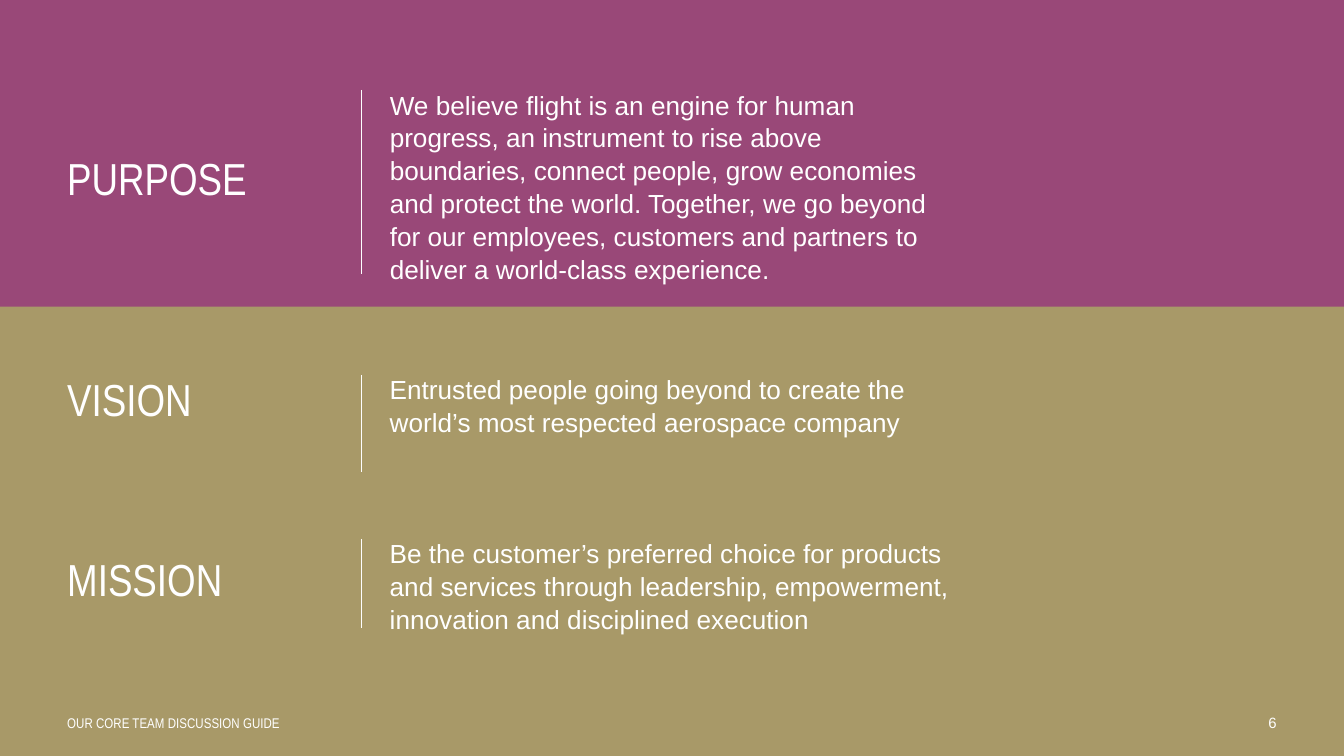
from lxml.etree import SubElement
from pptx import Presentation
from pptx.dml.color import RGBColor
from pptx.enum.shapes import MSO_CONNECTOR, MSO_SHAPE
from pptx.enum.text import MSO_ANCHOR, MSO_AUTO_SIZE, PP_ALIGN
from pptx.oxml.ns import qn
from pptx.util import Pt

WHITE, PLUM, SAND = "FFFFFF", "994878", "A89968"
WIDTH, HEIGHT, SPLIT = 720, 405, 164.3
LEFT, RULE, TEXT = 36, 193.7, 208.8

# heading, statement, top, heading height, rule height, statement width and height
ROWS = [
    ("PURPOSE",
     "We believe flight is an engine for human progress, an instrument to rise "
     "above boundaries, connect people, grow economies and protect the world. "
     "Together, we go beyond for our employees, customers and partners to "
     "deliver a world-class experience.",
     46.8, 100, 98.6, 303, 121.7),
    ("VISION",
     "Entrusted people going beyond to create the world’s most respected "
     "aerospace company",
     199.4, 32.4, 52.2, 321, 46.8),
    ("MISSION",
     "Be the customer’s preferred choice for products and services through "
     "leadership, empowerment, innovation and disciplined execution",
     287.3, 49, 47.7, 321, 59),
]


def rgb(code):
    return RGBColor.from_string(code)


def place(shape, x, y, w, h):
    shape.left, shape.top = Pt(x), Pt(y)
    shape.width, shape.height = Pt(w), Pt(h)


def write(shape, text, size, font="Arial", align=PP_ALIGN.LEFT,
          anchor=MSO_ANCHOR.TOP, inset=0):
    frame = shape.text_frame
    frame.word_wrap = True
    frame.auto_size = MSO_AUTO_SIZE.NONE
    frame.vertical_anchor = anchor
    frame.margin_left = frame.margin_right = frame.margin_bottom = 0
    frame.margin_top = Pt(inset)
    frame.text = text
    para = frame.paragraphs[0]
    para.alignment = align
    para.font.name = font
    para.font.size = Pt(size)
    para.font.color.rgb = rgb(WHITE)
    return para


def add_box(slide):
    return slide.shapes.add_textbox(0, 0, 0, 0)


def add_head(shape, text, y, h):
    place(shape, LEFT, y, RULE - LEFT, h)
    para = write(shape, text, 24, "Arial Narrow", anchor=MSO_ANCHOR.MIDDLE)
    para.line_spacing = 0.9


def add_body(shape, text, y, w, h):
    place(shape, TEXT, y, w, h)
    para = write(shape, text, 14)
    para.line_spacing = 1.05
    para.space_before, para.space_after = Pt(0), Pt(8)
    return para


def clear_bullet(para):
    props = para._p.get_or_add_pPr()
    props.set("marL", "0")
    props.set("indent", "0")
    fill = props.find(qn("a:defRPr"))
    mark = SubElement(props, qn("a:buNone"))
    fill.addprevious(mark)


def add_rule(slide, y, h):
    line = slide.shapes.add_connector(
        MSO_CONNECTOR.STRAIGHT, Pt(RULE), Pt(y), Pt(RULE), Pt(y + h))
    line.line.color.rgb = rgb(WHITE)
    line.line.width = Pt(1)
    SubElement(line._element.spPr, qn("a:effectLst"))


def add_band(slide):
    band = slide.shapes.add_shape(
        MSO_SHAPE.RECTANGLE, 0, Pt(SPLIT), Pt(WIDTH), Pt(HEIGHT - SPLIT))
    band.shadow.inherit = False
    band.fill.solid()
    band.fill.fore_color.rgb = rgb(SAND)
    band.line.fill.background()
    # Behind the placeholders
    slide.shapes._spTree.insert(2, band._element)


def add_foot(slide):
    note = add_box(slide)
    place(note, LEFT, 381.6, 313, 14.4)
    write(note, "OUR CORE TEAM DISCUSSION GUIDE", 7.5, "Arial Narrow", inset=1.4)
    page = add_box(slide)
    place(page, 648, 381.6, 36, 14.4)
    write(page, "6", 8, align=PP_ALIGN.RIGHT, inset=0.7)


def main():
    deck = Presentation()
    deck.slide_width, deck.slide_height = Pt(WIDTH), Pt(HEIGHT)
    slide = deck.slides.add_slide(deck.slide_layouts[1])
    slide.background.fill.solid()
    slide.background.fill.fore_color.rgb = rgb(PLUM)
    add_band(slide)
    add_foot(slide)
    for i, (name, text, top, high, rule, wide, deep) in enumerate(ROWS):
        head = add_box(slide) if i else slide.shapes.title
        body = add_box(slide) if i else slide.placeholders[1]
        add_head(head, name, top, high)
        para = add_body(body, text, top, wide, deep)
        if not i:
            clear_bullet(para)
        add_rule(slide, top + 1.4, rule)
    deck.save("out.pptx")


if __name__ == "__main__":
    main()
